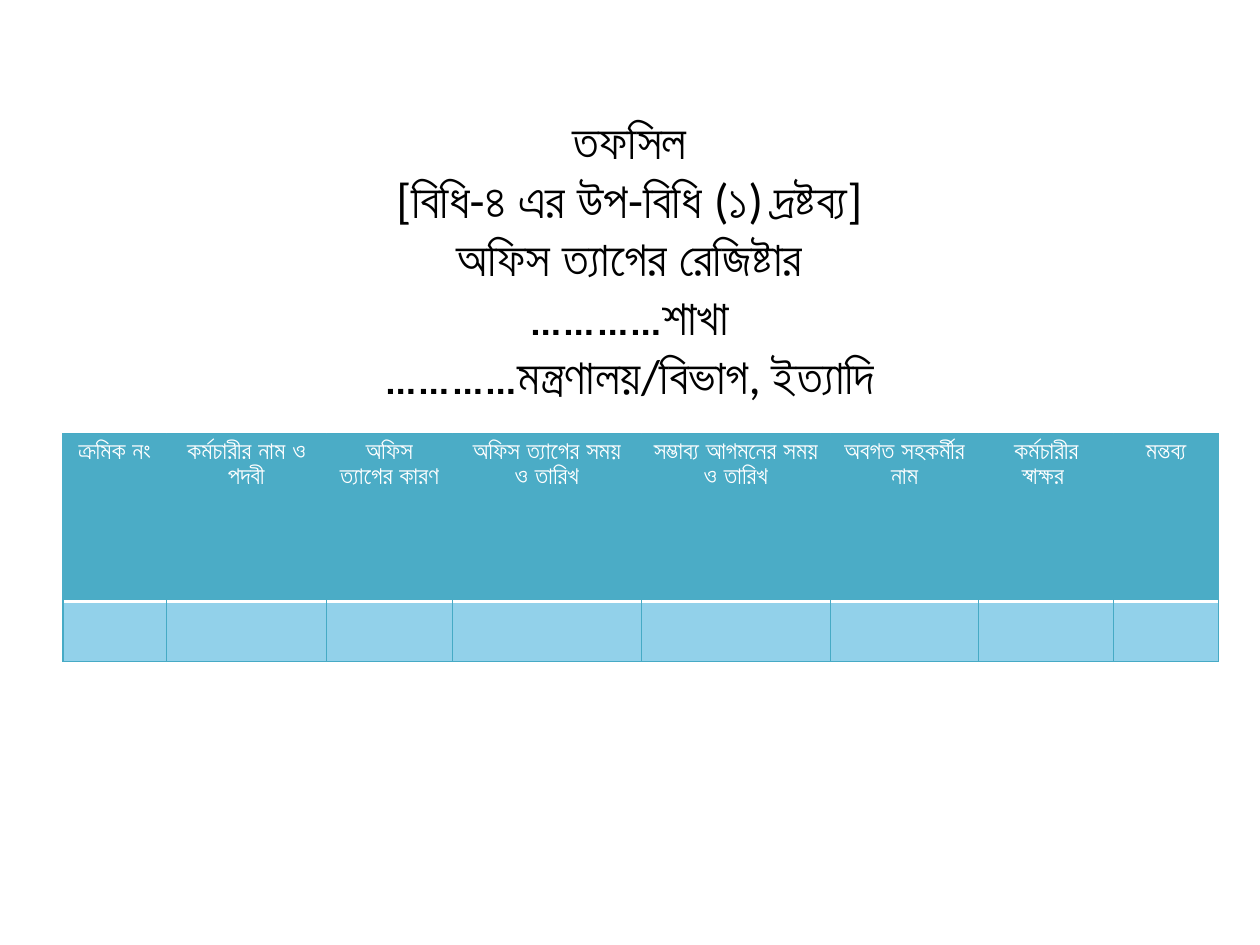
import pptx
import pptx.util
import pptx.dml.color
import pptx.enum.text
import pptx.oxml
import pptx.oxml.ns

COLORS = {"text": "000000", "white": "FFFFFF", "header": "4BACC6",
          "body": "92D1EA", "border": "46AAC5"}
HEADING = ["তফসিল", "[বিধি-৪ এর উপ-বিধি (১) দ্রষ্টব্য]", "অফিস ত্যাগের রেজিষ্টার",
           "…………শাখা", "…………মন্ত্রণালয়/বিভাগ, ইত্যাদি"]
COLUMNS = [("ক্রমিক নং", 0.82), ("কর্মচারীর নাম ও পদবী", 1.27),
           ("অফিস ত্যাগের কারণ", 1), ("অফিস ত্যাগের সময় ও তারিখ", 1.5),
           ("সম্ভাব্য আগমনের সময় ও তারিখ", 1.5), ("অবগত সহকর্মীর নাম", 1.18),
           ("কর্মচারীর স্বাক্ষর ", 1.07), ("মন্তব্য", 0.83)]
ROWS = [1.33, 0.48]


def rgb(name):
    return pptx.dml.color.RGBColor.from_string(COLORS[name])


class Register:
    """Style and current slide; positions are shares of the slide's size."""
    font = "Calibri"

    def __init__(self, prs):
        self.prs = prs
        self.s = prs.slides.add_slide(prs.slide_layouts[0])

    def box(self, x, y, w, h):
        width, height = self.prs.slide_width, self.prs.slide_height
        return [int(v) for v in (x * width, y * height, w * width, h * height)]

    def format(self, p, size, color, space, bold=None):
        p.alignment = pptx.enum.text.PP_ALIGN.CENTER
        p.space_before = p.space_after = pptx.util.Pt(space)
        for r in p.runs:
            r.font.size = pptx.util.Pt(size)
            r.font.name = self.font
            r.font.bold = bold
            r.font.color.rgb = rgb(color)

    def heading(self, lines, *share):
        title = self.s.shapes.title
        title.element.getparent().remove(title.element)
        sp = self.s.placeholders[1]
        sp.left, sp.top, sp.width, sp.height = self.box(*share)
        tf = sp.text_frame
        tf.text = "\n".join(lines)
        for p in tf.paragraphs:
            self.format(p, 28, "text", 0)

    def borders(self, cell, **sides):
        tcPr = cell._tc.get_or_add_tcPr()
        lines = [pptx.oxml.parse_xml(
            f'<a:ln{side} {pptx.oxml.ns.nsdecls("a")} w="{pptx.util.Pt(width)}">'
            f'<a:solidFill><a:srgbClr val="{COLORS[color]}"/></a:solidFill></a:ln{side}>')
            for side, (color, width) in sides.items()]
        for i, ln in enumerate(lines):
            tcPr.insert(i, ln)

    def table(self, columns, rows, *share):
        tbl = self.s.shapes.add_table(len(rows), len(columns), *self.box(*share)).table
        for row, height in zip(tbl.rows, rows):
            row.height = pptx.util.Inches(height)
        thin, edge, rule = ("border", 0.75), ("header", 0.75), ("white", 2)
        for i, (label, width) in enumerate(columns):
            tbl.columns[i].width = pptx.util.Inches(width)
            # Header cell
            cell = tbl.cell(0, i)
            cell.text_frame.text = label
            cell.margin_left = cell.margin_right = pptx.util.Pt(7)
            self.format(cell.text_frame.paragraphs[0], 14, "white", 6, True)
            self.borders(cell, L=edge, R=edge, T=thin, B=rule)
            # Blank entry cell
            entry = tbl.cell(1, i)
            self.borders(entry, L=thin, R=thin, T=rule, B=thin)
            for c, color in ((cell, "header"), (entry, "body")):
                c.fill.solid()
                c.fill.fore_color.rgb = rgb(color)


def main():
    prs = pptx.Presentation()
    prs.slide_width = pptx.util.Inches(10)
    prs.slide_height = pptx.util.Inches(7.5)
    register = Register(prs)
    # Schedule heading
    register.heading(HEADING, 0.058, 0.11, 0.883, 0.79)
    # Office leave register
    register.table(COLUMNS, ROWS, 0.05, 0.459, 0.917, 0.241)
    prs.save("out.pptx")


if __name__ == "__main__":
    main()
